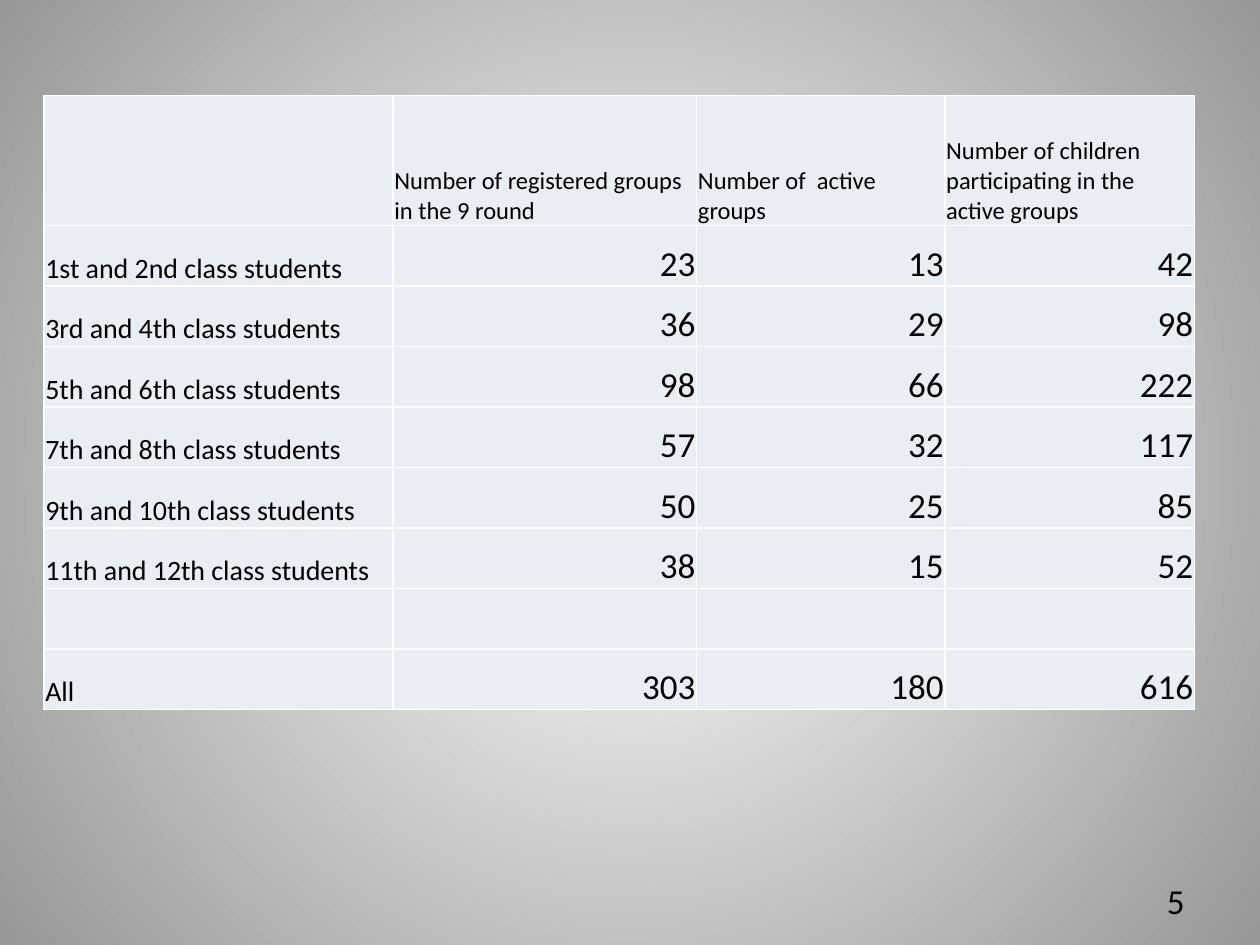
from lxml import etree
from pptx import Presentation
from pptx.dml.color import RGBColor
from pptx.enum.text import MSO_ANCHOR as Anchor, PP_ALIGN as Align
from pptx.oxml import parse_xml
from pptx.oxml.ns import nsdecls, qn
from pptx.util import Inches, Pt

FONT = "Calibri"
BLACK, WHITE, GREY, PALE = "000000", "FFFFFF", "979797", "E9EDF4"
COL_WIDTHS = [2.77, 2.41, 1.97, 1.98]
HEADER_HEIGHT, ROW_HEIGHT = 1.03, 0.48
ROWS = [
    ["", "Number of registered groups in the 9 round", "Number of  active groups",
     "Number of children participating in the active groups"],
    ["1st and 2nd class students", 23, 13, 42],
    ["3rd and 4th class students", 36, 29, 98],
    ["5th and 6th class students", 98, 66, 222],
    ["7th and 8th class students", 57, 32, 117],
    ["9th and 10th class students", 50, 25, 85],
    ["11th and 12th class students", 38, 15, 52],
    ["", "", "", ""],
    ["All", 303, 180, 616],
]


def color(hex_string):
    return RGBColor.from_string(hex_string)


def style_paragraph(p, size, align):
    p.alignment = align
    p.font.name = FONT
    p.font.size = Pt(size)
    p.font.color.rgb = color(BLACK)


def set_background(slide):
    """Fill the slide with a radial gradient, white in the middle."""
    fill = slide.background.fill
    fill.gradient()
    for stop, shade in zip(fill.gradient_stops, (WHITE, GREY)):
        stop.color.rgb = color(shade)
    grad = slide.background._cSld.find(".//" + qn("a:gradFill"))
    grad.remove(grad.find(qn("a:lin")))
    radial = etree.SubElement(grad, qn("a:path"), path="circle")
    etree.SubElement(radial, qn("a:fillToRect"), l="50000", t="50000", r="50000", b="50000")


def set_borders(cell, shade, width):
    tc_pr = cell._tc.get_or_add_tcPr()
    for i, side in enumerate("LRTB"):
        tc_pr.insert(i, parse_xml(
            f'<a:ln{side} {nsdecls("a")} w="{Pt(width)}"><a:solidFill>'
            f'<a:srgbClr val="{shade}"/></a:solidFill></a:ln{side}>'))


def fill_cell(cell, value, size, align):
    cell.fill.solid()
    cell.fill.fore_color.rgb = color(PALE)
    set_borders(cell, WHITE, 1)
    cell.vertical_anchor = Anchor.BOTTOM
    cell.margin_left = cell.margin_right = cell.margin_top = Inches(0.01)
    cell.margin_bottom = 0
    cell.text = str(value)
    style_paragraph(cell.text_frame.paragraphs[0], size, align)


def add_groups_table(slide, left, top, width, height):
    table = slide.shapes.add_table(len(ROWS), len(COL_WIDTHS), Inches(left), Inches(top),
                                   Inches(width), Inches(height)).table
    table.first_row = table.horz_banding = False
    for column, share in zip(table.columns, COL_WIDTHS):
        column.width = Inches(width * share / sum(COL_WIDTHS))
    for r, values in enumerate(ROWS):
        table.rows[r].height = Inches(ROW_HEIGHT if r else HEADER_HEIGHT)
        for c, value in enumerate(values):
            size = 14 if r == 0 else 16 if c == 0 else 20
            align = Align.RIGHT if r and c else Align.LEFT
            fill_cell(table.cell(r, c), value, size, align)


def add_page_number(slide, left, top, width, height):
    tf = slide.shapes.add_textbox(Inches(left), Inches(top),
                                  Inches(width), Inches(height)).text_frame
    tf.word_wrap = True
    tf.vertical_anchor = Anchor.MIDDLE
    tf.text = "5"
    style_paragraph(tf.paragraphs[0], 20, Align.RIGHT)


def main():
    prs = Presentation()
    prs.slide_width, prs.slide_height = Inches(10), Inches(7.5)
    slide = prs.slides.add_slide(prs.slide_layouts[6])
    set_background(slide)
    add_groups_table(slide, 0.35, 0.76, 9.13, 4.88)
    add_page_number(slide, 7.17, 6.95, 2.33, 0.4)
    prs.save("out.pptx")


if __name__ == "__main__":
    main()
